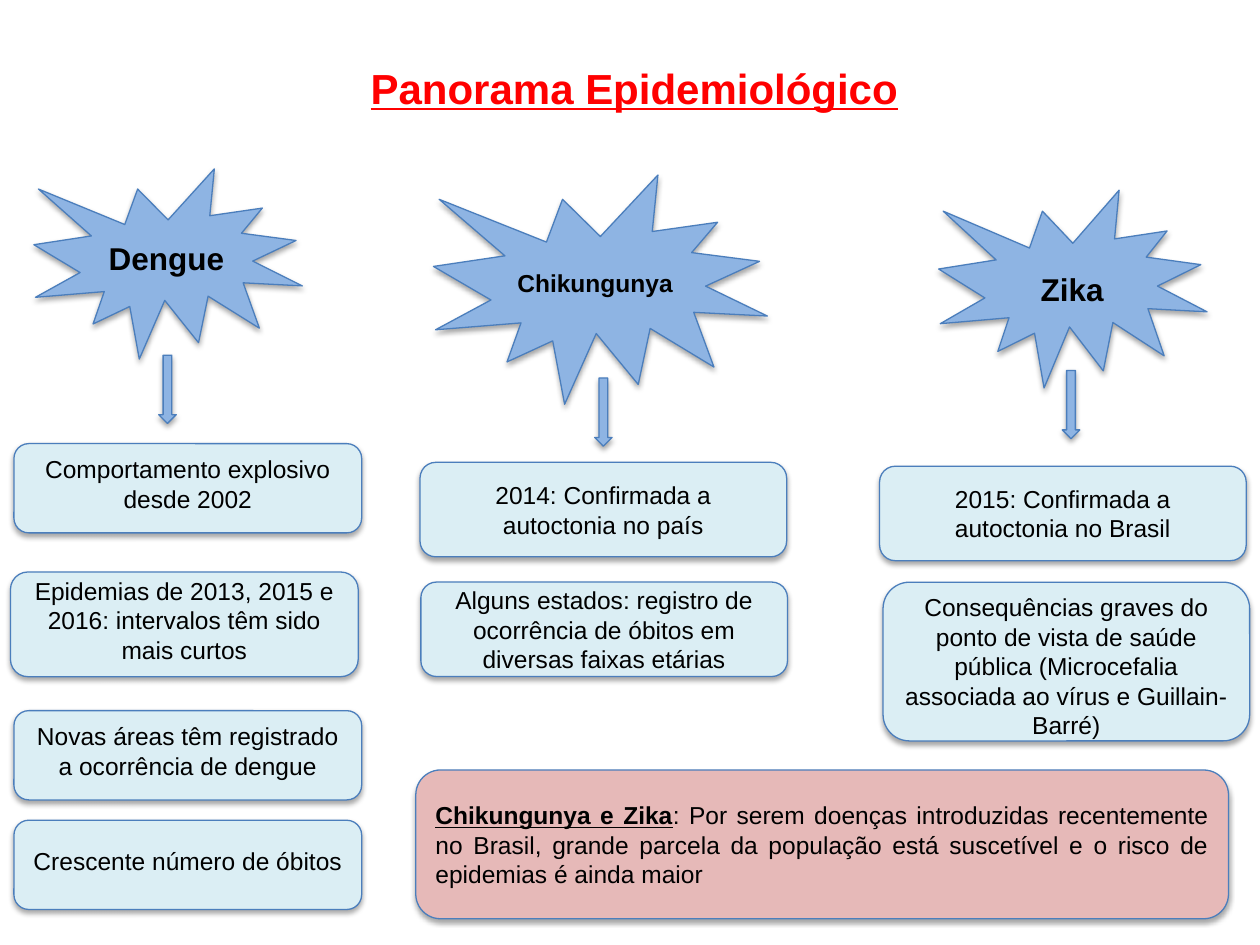
import dataclasses

import pptx
import pptx.dml.color
import pptx.enum.shapes
import pptx.enum.text
import pptx.oxml
import pptx.oxml.ns
import pptx.util

Pt = pptx.util.Pt
Shape = pptx.enum.shapes.MSO_SHAPE
Align = pptx.enum.text.PP_ALIGN
Anchor = pptx.enum.text.MSO_ANCHOR


@dataclasses.dataclass(frozen=True)
class Theme:
    font: str = "Arial"
    title: str = "FF0000"
    text: str = "000000"
    seal: str = "8EB4E3"
    card: str = "DBEEF4"
    warning: str = "E6B9B8"
    outline: str = "4B7EBC"
    title_size: float = 24
    label_size: float = 18
    body_size: float = 14


THEME = Theme()
SHADOW = (
    '<a:outerShdw xmlns:a="http://schemas.openxmlformats.org/drawingml/2006/main" '
    'blurRad="39400" dist="22900" dir="5400000" rotWithShape="0">'
    '<a:srgbClr val="000000"><a:alpha val="35000"/></a:srgbClr></a:outerShdw>'
)


@dataclasses.dataclass(frozen=True)
class Card:
    """One statement, placed relative to its column."""
    left: float
    top: float
    height: float
    lines: tuple
    lift: float = 0


def rgb(value):
    return pptx.dml.color.RGBColor.from_string(value)


def write(frame, text, size=THEME.body_size, color=THEME.text, align=Align.CENTER,
          bold=False, underline=False, new_para=False):
    """Add formatted text to the last paragraph, or to a new one."""
    para = frame.add_paragraph() if new_para else frame.paragraphs[-1]
    para.alignment = align
    span = para.add_run()
    span.text = text
    span.font.name = THEME.font
    span.font.size = Pt(size)
    span.font.bold = bold
    span.font.underline = underline
    span.font.color.rgb = rgb(color)


def add_text_box(page, left, top, width, height):
    box = page.shapes.add_textbox(Pt(left), Pt(top), Pt(width), Pt(height))
    box.text_frame.word_wrap = True
    return box.text_frame


def add_block(page, kind, left, top, width, height, fill):
    """Add an outlined shape with a soft shadow below it."""
    block = page.shapes.add_shape(kind, Pt(left), Pt(top), Pt(width), Pt(height))
    block.fill.solid()
    block.fill.fore_color.rgb = rgb(fill)
    block.line.color.rgb = rgb(THEME.outline)
    block.line.width = Pt(0.75)
    block.shadow.inherit = False
    effects = block._element.spPr.find(pptx.oxml.ns.qn("a:effectLst"))
    effects.append(pptx.oxml.parse_xml(SHADOW))
    frame = block.text_frame
    frame.word_wrap = True
    frame.vertical_anchor = Anchor.MIDDLE
    return frame


def add_title(page, left, top, width, height):
    frame = add_text_box(page, left, top, width, height)
    write(frame, "Panorama Epidemiológico", size=THEME.title_size,
          color=THEME.title, bold=True, underline=True)


def add_card(page, left, top, width, card):
    frame = add_block(page, Shape.FLOWCHART_ALTERNATE_PROCESS, left + card.left,
                      top + card.top, width, card.height, THEME.card)
    # A one-sided margin moves the centred text up or down
    frame.margin_bottom = Pt(3.6 + max(2 * card.lift, 0))
    frame.margin_top = Pt(3.6 + max(-2 * card.lift, 0))
    for index, line in enumerate(card.lines):
        write(frame, line, new_para=index > 0)


def add_disease(page, left, top, width, name, seal, arrow, cards,
                size=THEME.label_size, align=Align.CENTER, label=None):
    """Column of one disease: seal, arrow and its statements."""
    seal_left, seal_width, seal_height = seal
    frame = add_block(page, Shape.EXPLOSION1, left + seal_left, top,
                      seal_width, seal_height, THEME.seal)
    if label:
        label_left, label_top, label_width, label_height = label
        frame = add_text_box(page, left + label_left, top + label_top,
                             label_width, label_height)
    write(frame, name, size=size, align=align, bold=True)

    arrow_left, arrow_top = arrow
    add_block(page, Shape.DOWN_ARROW, left + arrow_left, top + arrow_top,
              10, 39, THEME.seal)
    for card in cards:
        add_card(page, left, top, width, card)


def add_warning(page, left, top, width, height):
    frame = add_block(page, Shape.FLOWCHART_ALTERNATE_PROCESS,
                      left, top, width, height, THEME.warning)
    write(frame, "Chikungunya e Zika", align=Align.JUSTIFY, bold=True, underline=True)
    write(frame, ": Por serem doenças introduzidas recentemente no Brasil, grande "
          "parcela da população está suscetível e o risco de epidemias é ainda maior",
          align=Align.JUSTIFY)


def main():
    deck = pptx.Presentation()
    deck.slide_width, deck.slide_height = Pt(720), Pt(540)
    page = deck.slides.add_slide(deck.slide_layouts[6])

    add_title(page, 12, 32, 701, 36)

    # Dengue
    add_disease(page, 6, 96.5, 198.7, "Dengue", seal=(13.4, 153.4, 108.7),
                arrow=(84.7, 106.5), cards=[
        Card(2, 157, 51, ("Comportamento explosivo", "desde 2002"), lift=2.5),
        Card(0, 230.4, 59.8, ("Epidemias de 2013, 2015 e 2016: intervalos têm "
                              "sido mais curtos",), lift=2.5),
        Card(2, 309.6, 51, ("Novas áreas têm registrado a ocorrência de dengue",),
             lift=2.5),
        Card(2, 372.2, 51, ("Crescente número de óbitos",), lift=2.5),
    ])

    # Chikungunya
    add_disease(page, 240, 100, 209.5, "Chikungunya", seal=(7.7, 190.8, 131),
                arrow=(99.8, 116), size=THEME.body_size, align=Align.LEFT, cards=[
        Card(0, 164.2, 54, ("2014: Confirmada a autoctonia no país",)),
        Card(0.5, 232.6, 54, ("Alguns estados: registro de ocorrência de óbitos "
                              "em diversas faixas etárias",)),
    ])

    # Zika
    add_disease(page, 502.6, 108.7, 209.5, "Zika", seal=(33.8, 153.4, 113),
                arrow=(104.4, 103), label=(76.3, 41.8, 67.7, 28.8), cards=[
        Card(0, 157.7, 54, ("2015: Confirmada a autoctonia no Brasil",)),
        Card(2, 224, 90.7, ("Consequências graves do ponto de vista de saúde "
                            "pública (Microcefalia associada ao vírus e "
                            "Guillain-Barré)",), lift=-2.5),
    ])

    add_warning(page, 237.6, 440, 464.4, 85)
    deck.save("out.pptx")


if __name__ == "__main__":
    main()
